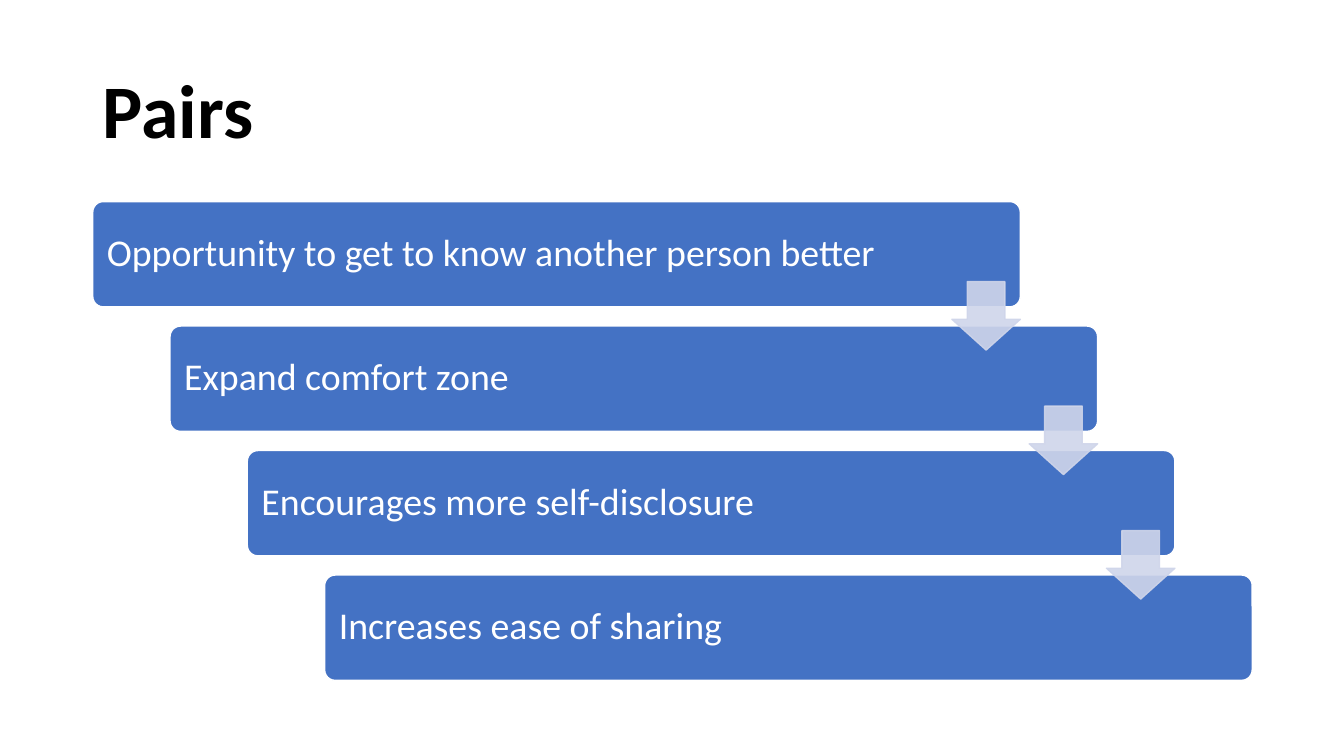
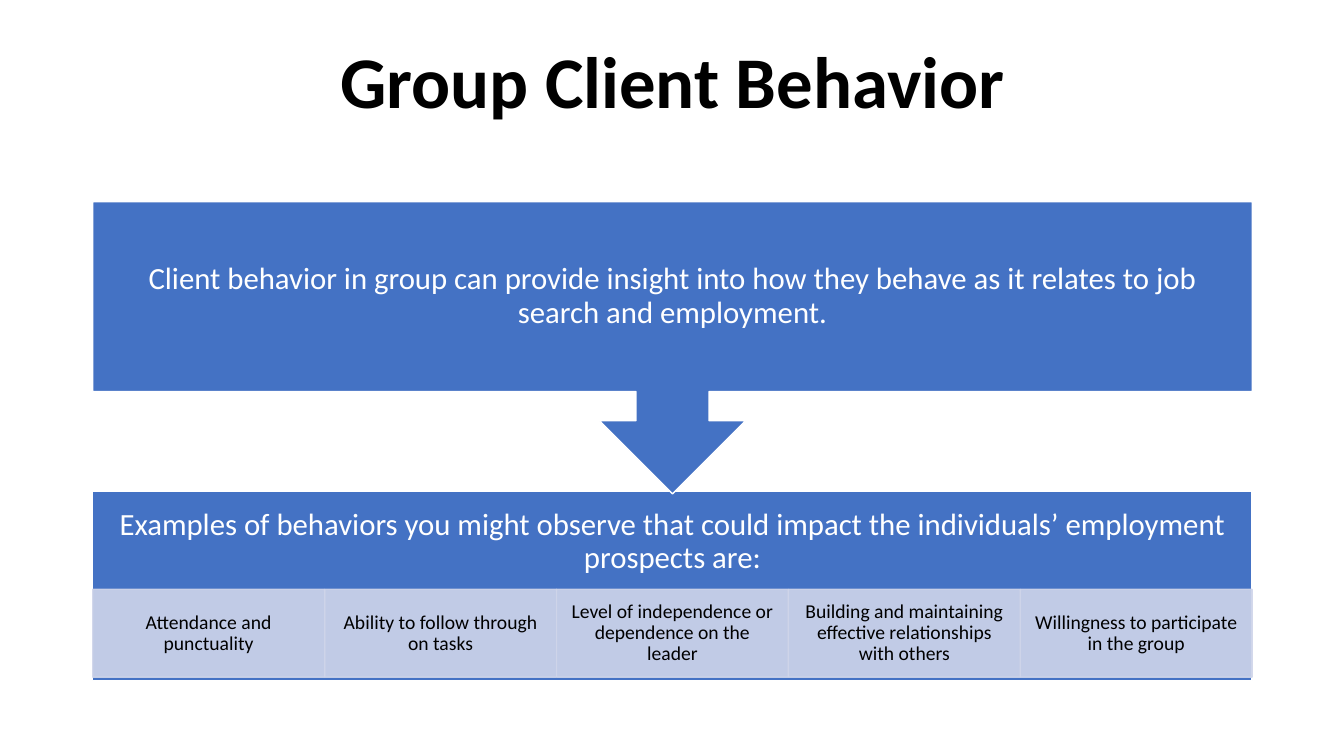
from dataclasses import dataclass
from lxml.etree import SubElement
from pptx import Presentation
from pptx.dml.color import RGBColor
from pptx.enum.shapes import MSO_SHAPE
from pptx.enum.text import MSO_ANCHOR, PP_ALIGN
from pptx.oxml.ns import qn
from pptx.util import Inches, Pt

PAIRS = {
    "title": "Pairs",
    "steps": [
        "Opportunity to get to know another person better",
        "Expand comfort zone",
        "Encourages more self-disclosure",
        "Increases ease of sharing",
    ],
}
BEHAVIOR = {
    "title": "Group Client Behavior",
    "insight": "Client behavior in group can provide insight into how they behave "
               "as it relates to job search and employment.",
    "lead": "Examples of behaviors you might observe that could impact the "
            "individuals’ employment prospects are:",
    "examples": [
        "Attendance and punctuality",
        "Ability to follow through on tasks",
        "Level of independence or dependence on the leader",
        "Building and maintaining effective relationships with others",
        "Willingness to participate in the group",
    ],
}


@dataclass(frozen=True)
class Theme:
    font: str = "Calibri"
    ink: str = "000000"
    paper: str = "FFFFFF"
    accent: str = "4472C4"
    tint: str = "CFD5EA"
    tint_alpha: int = 90
    outline: int = 1
    step_size: int = 27
    statement_size: int = 22
    example_size: int = 14


THEME = Theme()
SLIDE_W, SLIDE_H = 13.33, 7.5
LEFT, TOP, WIDTH, HEIGHT = 0.92, 2, 11.5, 4.75
TITLE_H = 1


def write(shape, text, size, color, align=PP_ALIGN.CENTER, insets=(0.1, 0.05, 0.1, 0.05), bold=False):
    frame = shape.text_frame
    sides = ("margin_left", "margin_top", "margin_right", "margin_bottom")
    layout = dict(zip(sides, map(Inches, insets)))
    layout |= {"word_wrap": True, "vertical_anchor": MSO_ANCHOR.MIDDLE}
    paragraph = frame.paragraphs[0]
    run = paragraph.add_run()
    run.text = text
    formats = (
        (frame, layout),
        (paragraph, {"alignment": align, "line_spacing": 0.9}),
        (run.font, {"name": THEME.font, "size": Pt(size), "bold": bold}),
    )
    for target, values in formats:
        for name, value in values.items():
            setattr(target, name, value)
    run.font.color.rgb = RGBColor.from_string(color)


def add_block(slide, kind, box, fill=THEME.accent, line=THEME.paper, alpha=100, adjust=()):
    block = slide.shapes.add_shape(kind, *map(Inches, box))
    block.shadow.inherit = False
    block.fill.solid()
    block.fill.fore_color.rgb = RGBColor.from_string(fill)
    block.line.color.rgb = RGBColor.from_string(line)
    block.line.width = Pt(THEME.outline)
    for index, value in enumerate(adjust):
        block.adjustments[index] = value
    if alpha < 100:
        for color in list(block._element.spPr.iter(qn("a:srgbClr"))):
            SubElement(color, qn("a:alpha")).set("val", str(alpha * 1000))
    return block


def add_tint(slide, kind, box, adjust=()):
    return add_block(slide, kind, box, THEME.tint, THEME.tint, THEME.tint_alpha, adjust)


def add_titled_slide(deck, title, middle, size, align):
    slide = deck.slides.add_slide(deck.slide_layouts[6])
    box = (LEFT, middle - TITLE_H / 2, WIDTH, TITLE_H)
    heading = slide.shapes.add_textbox(*map(Inches, box))
    write(heading, title, size, THEME.ink, align, bold=True)
    return slide


def build_pairs(deck):
    slide = add_titled_slide(deck, PAIRS["title"], 1.13, 54, PP_ALIGN.LEFT)
    steps = PAIRS["steps"]
    step_w, step_h = WIDTH * 0.8, HEIGHT * 0.22
    shift = (WIDTH - step_w) / (len(steps) - 1)
    drop = (HEIGHT - step_h) / (len(steps) - 1)
    arrow = step_h * 0.65
    corners = [(LEFT + i * shift, TOP + i * drop) for i in range(len(steps))]
    for (x, y), text in zip(corners, steps):
        bar = add_block(slide, MSO_SHAPE.ROUNDED_RECTANGLE, (x, y, step_w, step_h), adjust=(0.1,))
        write(bar, text, THEME.step_size, THEME.paper, PP_ALIGN.LEFT, (0.11,) * 4)
    for x, y in corners[:-1]:
        box = (x + step_w - arrow, y + step_h * 0.76, arrow, arrow)
        add_tint(slide, MSO_SHAPE.DOWN_ARROW, box, (0.55, 0.45))


def build_behavior(deck):
    slide = add_titled_slide(deck, BEHAVIOR["title"], 0.84, 52, PP_ALIGN.CENTER)
    panel_h, callout_h, example_h = 1.88, 2.9, 0.87
    panel_top = TOP + HEIGHT - panel_h
    examples_top = panel_top + panel_h * 0.52
    pad = 0.17

    panel = add_block(slide, MSO_SHAPE.RECTANGLE, (LEFT, panel_top, WIDTH, panel_h))
    write(panel, BEHAVIOR["lead"], THEME.statement_size, THEME.paper,
          insets=(pad, pad, pad, pad + panel_h * 0.46))

    examples = BEHAVIOR["examples"]
    example_w = WIDTH / len(examples)
    for column, text in enumerate(examples):
        box = (LEFT + column * example_w, examples_top, example_w, example_h)
        cell = add_tint(slide, MSO_SHAPE.RECTANGLE, box)
        write(cell, text, THEME.example_size, THEME.ink, insets=(0.11, 0.02, 0.11, 0.02))

    callout = add_block(slide, MSO_SHAPE.DOWN_ARROW_CALLOUT, (LEFT, TOP, WIDTH, callout_h))
    write(callout, BEHAVIOR["insight"], THEME.statement_size, THEME.paper, insets=(pad,) * 4)


def main():
    deck = Presentation()
    deck.slide_width, deck.slide_height = Inches(SLIDE_W), Inches(SLIDE_H)
    build_pairs(deck)
    build_behavior(deck)
    deck.save("out.pptx")


if __name__ == "__main__":
    main()
